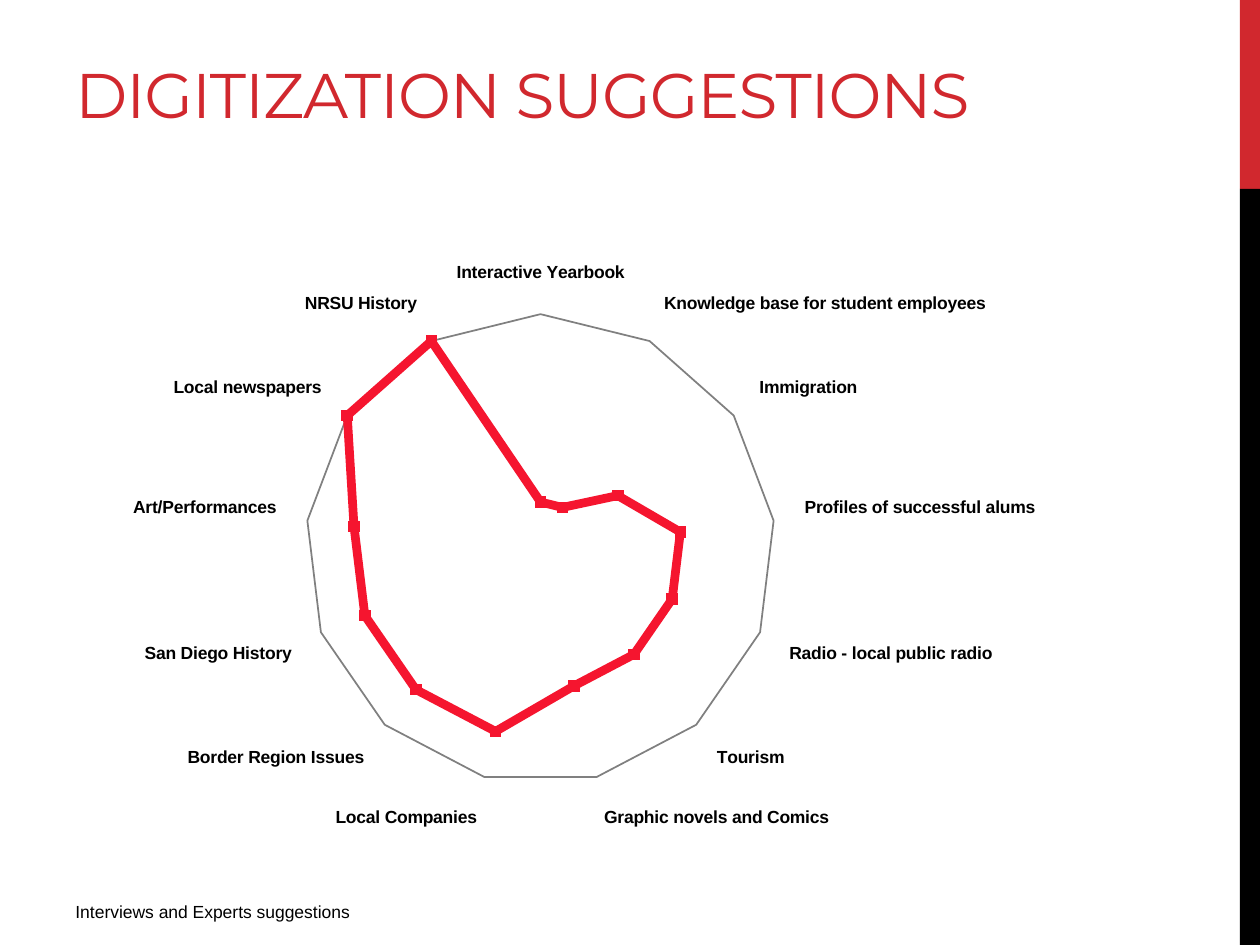
from lxml import etree
from pptx import Presentation, util as u
from pptx.chart.data import CategoryChartData
from pptx.dml.color import RGBColor
from pptx.enum import chart as ch, shapes, text
from pptx.oxml.ns import qn

RED, BLACK, GREY, LINE = "D1282E", "000000", "808080", "F5152F"

IDEAS = {
    "Interactive Yearbook": 20,
    "Knowledge base for student employees": 20,
    "Immigration": 40,
    "Profiles of successful alums": 60,
    "Radio - local public radio": 60,
    "Tourism": 60,
    "Graphic novels and Comics": 60,
    "Local Companies": 80,
    "Border Region Issues": 80,
    "San Diego History": 80,
    "Art/Performances": 80,
    "Local newspapers": 100,
    "NRSU History": 100,
}


def color(code):
    return RGBColor.from_string(code)


class Deck:
    """Style and current slide; lengths are inches on a 10 by 7.5 grid."""

    def __init__(self):
        self.prs = Presentation()
        self.prs.slide_width, self.prs.slide_height = u.Inches(10), u.Inches(7.5)
        self.slide = self.prs.slides.add_slide(self.prs.slide_layouts[6])

    def bar(self, box, fill):
        bar = self.slide.shapes.add_shape(
            shapes.MSO_SHAPE.RECTANGLE, *map(u.Inches, box))
        bar.shadow.inherit = False
        bar.fill.solid()
        bar.fill.fore_color.rgb = color(fill)
        bar.line.fill.background()

    def label(self, box, words, size, face, ink, anchor="TOP", track=0):
        """Add a text box; track is letter spacing in points."""
        frame = self.slide.shapes.add_textbox(*map(u.Inches, box)).text_frame
        frame.word_wrap = True
        frame.vertical_anchor = text.MSO_ANCHOR[anchor]
        frame.text = words
        run = frame.paragraphs[0].runs[0]
        run.font.size, run.font.name = u.Pt(size), face
        run.font.color.rgb = color(ink)
        if track:
            run._r.get_or_add_rPr().set("spc", str(round(track * 100)))

    def radar(self, box, plot, data):
        """Add a radar chart; plot is the inner area as shares of the chart."""
        table = CategoryChartData()
        table.categories = list(data)
        table.add_series("Series 1", list(data.values()))
        chart = self.slide.shapes.add_chart(
            ch.XL_CHART_TYPE.RADAR_MARKERS, *map(u.Inches, box), table).chart
        chart.has_legend = chart.has_title = False
        chart.font.size, chart.font.name = u.Pt(10), "Arial"
        chart.font.color.rgb = color(BLACK)
        chart.category_axis.tick_labels.font.bold = True

        axis = chart.value_axis
        axis.minimum_scale, axis.maximum_scale, axis.major_unit = 0, 100, 100
        axis.has_major_gridlines = True
        axis.major_gridlines.format.line.color.rgb = color(GREY)
        axis.major_gridlines.format.line.width = u.Pt(1)
        axis.visible = False

        chart.plots[0].vary_by_categories = False
        line = chart.plots[0].series[0]
        line.smooth = False
        line.format.line.color.rgb = color(LINE)
        line.format.line.width = u.Pt(5)
        mark = line.marker
        mark.style, mark.size = ch.XL_MARKER_STYLE.SQUARE, 6
        mark.format.fill.solid()
        mark.format.fill.fore_color.rgb = color(LINE)
        mark.format.line.color.rgb = color(LINE)
        self.place(chart, plot)

    def place(self, chart, plot):
        """Fix the inner plot area of the chart."""
        area = chart._chartSpace.chart.plotArea
        old = area.find(qn("c:layout"))
        if old is not None:
            area.remove(old)
        layout = etree.Element(qn("c:layout"))
        area.insert(0, layout)
        manual = etree.SubElement(layout, qn("c:manualLayout"))
        parts = [("layoutTarget", "inner"), ("xMode", "edge"), ("yMode", "edge")]
        for tag, val in parts + list(zip("xywh", plot)):
            etree.SubElement(manual, qn("c:" + tag)).set("val", str(val))


def main():
    deck = Deck()
    deck.bar((9.84, 0, 0.16, 1.5), RED)
    deck.bar((9.84, 1.5, 0.16, 6), BLACK)
    deck.label((0.5, 0.17, 8.75, 0.92), "DIGITIZATION SUGGESTIONS",
               36, "Montserrat", RED, "BOTTOM", -0.6)
    deck.label((0.5, 7.1, 3.75, 0.31), "Interviews and Experts suggestions",
               10, "Arial", BLACK)
    deck.radar((0.5, 1.92, 8.33, 4.78), (0.23, 0.12, 0.45, 0.78), IDEAS)
    deck.prs.save("out.pptx")


if __name__ == "__main__":
    main()
